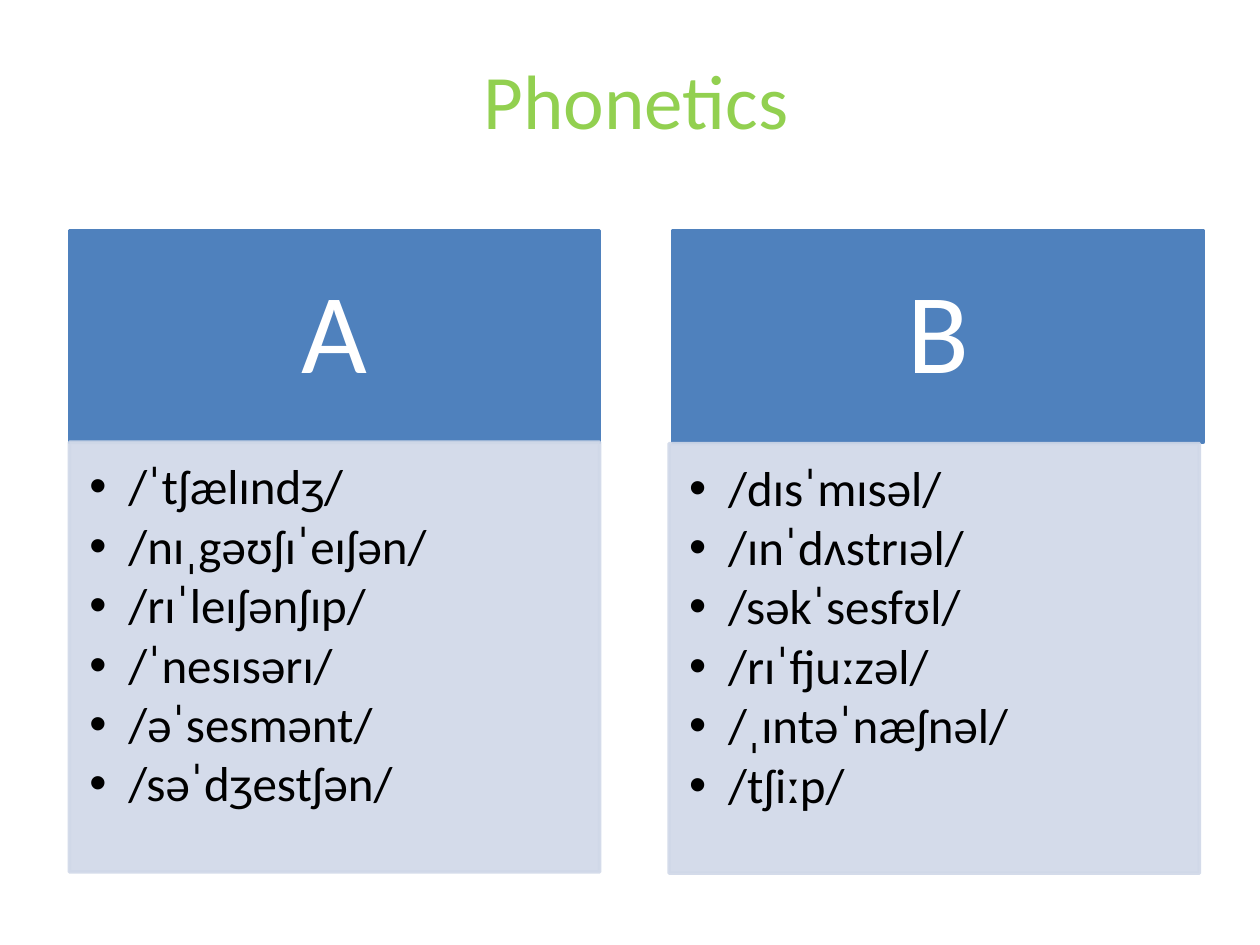
from dataclasses import dataclass

from lxml.etree import SubElement
from pptx import Presentation
from pptx.dml.color import RGBColor
from pptx.enum.shapes import MSO_SHAPE as SHAPE
from pptx.enum.text import MSO_ANCHOR as ANCHOR, PP_ALIGN as ALIGN
from pptx.oxml.ns import qn
from pptx.util import Inches, Pt

COLORS = {"title": "92D050", "header": "4F81BD", "body": "D0D8E8",
          "light": "FFFFFF", "dark": "000000"}
FONT = "Calibri"
WIDTH, HEADER_TOP, HEADER_HEIGHT, BODY_HEIGHT = 4.21, 1.83, 1.68, 3.41


@dataclass
class Column:
    letter: str
    words: list[str]
    header_left: float
    body_left: float
    body_top: float


COLUMNS = [
    Column("A", ["/ˈtʃælɪndʒ/", "/nɪˌgəʊʃɪˈeɪʃən/", "/rɪˈleɪʃənʃɪp/",
                 "/ˈnesɪsərɪ/", "/əˈsesmənt/", "/səˈdʒestʃən/"], 0.55, 0.55, 3.51),
    Column("B", ["/dɪsˈmɪsəl/", "/ɪnˈdʌstrɪəl/", "/səkˈsesfʊl/",
                 "/rɪˈfjuːzəl/", "/ˌɪntəˈnæʃnəl/", "/tʃiːp/"], 5.34, 5.31, 3.52),
]


def add_run(p, text: str, size: float, color: str) -> None:
    r = p.add_run()
    r.text = text
    r.font.name, r.font.size = FONT, Pt(size)
    r.font.color.rgb = RGBColor.from_string(COLORS[color])


def set_frame(tf, insets: tuple, anchor) -> None:
    tf.word_wrap, tf.vertical_anchor = True, anchor
    (tf.margin_left, tf.margin_top,
     tf.margin_right, tf.margin_bottom) = map(Inches, insets)


def add_box(s, left: float, top: float, height: float, color: str, opacity: int = 100):
    sp = s.shapes.add_shape(SHAPE.RECTANGLE, Inches(left), Inches(top),
                            Inches(WIDTH), Inches(height))
    sp.shadow.inherit = False
    sp.line.width = Pt(2)
    for fill in (sp.fill, sp.line.fill):
        fill.solid()
        fill.fore_color.rgb = RGBColor.from_string(COLORS[color])
    if opacity < 100:
        for clr in sp._element.spPr.iter(qn("a:srgbClr")):
            SubElement(clr, qn("a:alpha"), val=str(opacity * 1000))
    return sp


def add_bullet(p) -> None:
    pPr = p._p.get_or_add_pPr()
    pPr.set("marL", str(Inches(0.31)))
    pPr.set("indent", str(Inches(-0.31)))
    SubElement(pPr, qn("a:buFont"), typeface="Arial")
    SubElement(pPr, qn("a:buChar"), char="•")


def add_column(s, column: Column) -> None:
    tf = add_box(s, column.header_left, HEADER_TOP, HEADER_HEIGHT, "header").text_frame
    set_frame(tf, (0.51, 0.29, 0.51, 0.29), ANCHOR.MIDDLE)
    p = tf.paragraphs[0]
    p.alignment, p.line_spacing = ALIGN.CENTER, 0.9
    add_run(p, column.letter, 65, "light")

    tf = add_box(s, column.body_left, column.body_top, BODY_HEIGHT, "body", 90).text_frame
    set_frame(tf, (0.16, 0.16, 0.22, 0.24), ANCHOR.TOP)
    for i, word in enumerate(column.words):
        p = tf.add_paragraph() if i else tf.paragraphs[0]
        p.alignment, p.line_spacing, p.space_after = ALIGN.LEFT, 0.9, Pt(3.7)
        add_bullet(p)
        add_run(p, word, 28, "dark")


def add_title(s, text: str) -> None:
    sp = s.shapes.add_textbox(Inches(0.55), Inches(0.16), Inches(9), Inches(1.25))
    set_frame(sp.text_frame, (0.1, 0.05, 0.1, 0.05), ANCHOR.MIDDLE)
    p = sp.text_frame.paragraphs[0]
    p.alignment = ALIGN.CENTER
    add_run(p, text, 44, "title")


def main() -> None:
    """Build the phonetics slide with its two word columns."""
    prs = Presentation()
    prs.slide_width, prs.slide_height = Inches(10), Inches(7.5)
    s = prs.slides.add_slide(prs.slide_layouts[6])
    add_title(s, "Phonetics")
    for column in COLUMNS:
        add_column(s, column)
    prs.save("out.pptx")


if __name__ == "__main__":
    main()
